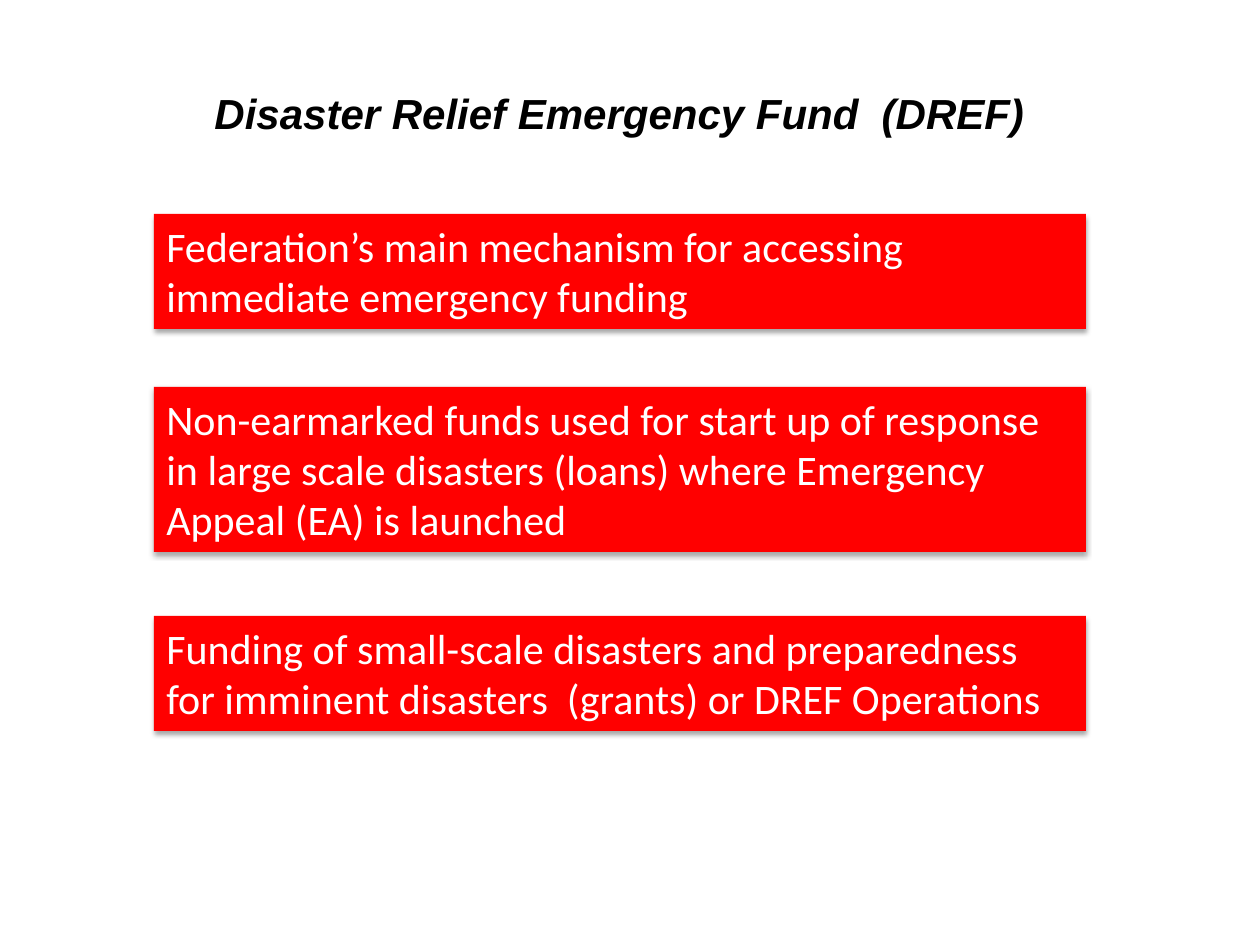
from lxml.etree import SubElement
from pptx import Presentation
from pptx.dml.color import RGBColor
from pptx.enum.shapes import MSO_SHAPE as Shape
from pptx.enum.text import MSO_ANCHOR as Anchor, PP_ALIGN as Align
from pptx.oxml.ns import qn
from pptx.util import Emu, Pt

PX_PER_INCH = 126
RED, WHITE, BLACK = "FF0000", "FFFFFF", "000000"
PANEL_LEFT, PANEL_WIDTH = 154, 932
POINTS = [
    (214, 115, "Federation’s main mechanism for accessing immediate emergency funding"),
    (387, 165, "Non-earmarked funds used for start up of response in large scale "
               "disasters (loans) where Emergency Appeal (EA) is launched"),
    (616, 115, "Funding of small-scale disasters and preparedness for imminent "
               "disasters  (grants) or DREF Operations"),
]


def px(length):
    return Emu(round(length * 914400 / PX_PER_INCH))


def color(value):
    return RGBColor.from_string(value)


def write(box, text, *, font, ink, size=24, align=Align.LEFT,
          anchor=Anchor.TOP, bold=False, italic=False):
    frame = box.text_frame
    frame.word_wrap = True
    frame.vertical_anchor = anchor
    para = frame.paragraphs[0]
    para.alignment = align
    span = para.add_run()
    span.text = text
    span.font.name = font
    span.font.size = Pt(size)
    span.font.bold = bold
    span.font.italic = italic
    span.font.color.rgb = color(ink)


def add_shadow(shape):
    shape.shadow.inherit = False
    effects = shape._element.spPr.find(qn("a:effectLst"))
    shadow = SubElement(effects, qn("a:outerShdw"), blurRad=str(Pt(3.1)),
                        dist=str(Pt(1.8)), dir="5400000", rotWithShape="0")
    tint = SubElement(shadow, qn("a:srgbClr"), val=BLACK)
    SubElement(tint, qn("a:alpha"), val="35000")


def add_title(page, text):
    box = page.shapes.add_textbox(px(64), px(76), px(1111), px(118))
    box.text_frame.margin_top = px(11)
    write(box, text, font="Arial", ink=BLACK, align=Align.CENTER,
          bold=True, italic=True)


def add_panel(page, top, height, text):
    panel = page.shapes.add_shape(Shape.RECTANGLE, px(PANEL_LEFT), px(top),
                                  px(PANEL_WIDTH), px(height))
    panel.fill.solid()
    panel.fill.fore_color.rgb = color(RED)
    panel.line.fill.background()
    add_shadow(panel)
    write(panel, text, font="Calibri", ink=WHITE)


def main():
    deck = Presentation()
    deck.slide_width, deck.slide_height = px(1260), px(945)
    page = deck.slides.add_slide(deck.slide_layouts[6])
    add_title(page, "Disaster Relief Emergency Fund  (DREF)")
    for top, height, text in POINTS:
        add_panel(page, top, height, text)
    deck.save("out.pptx")


if __name__ == "__main__":
    main()
